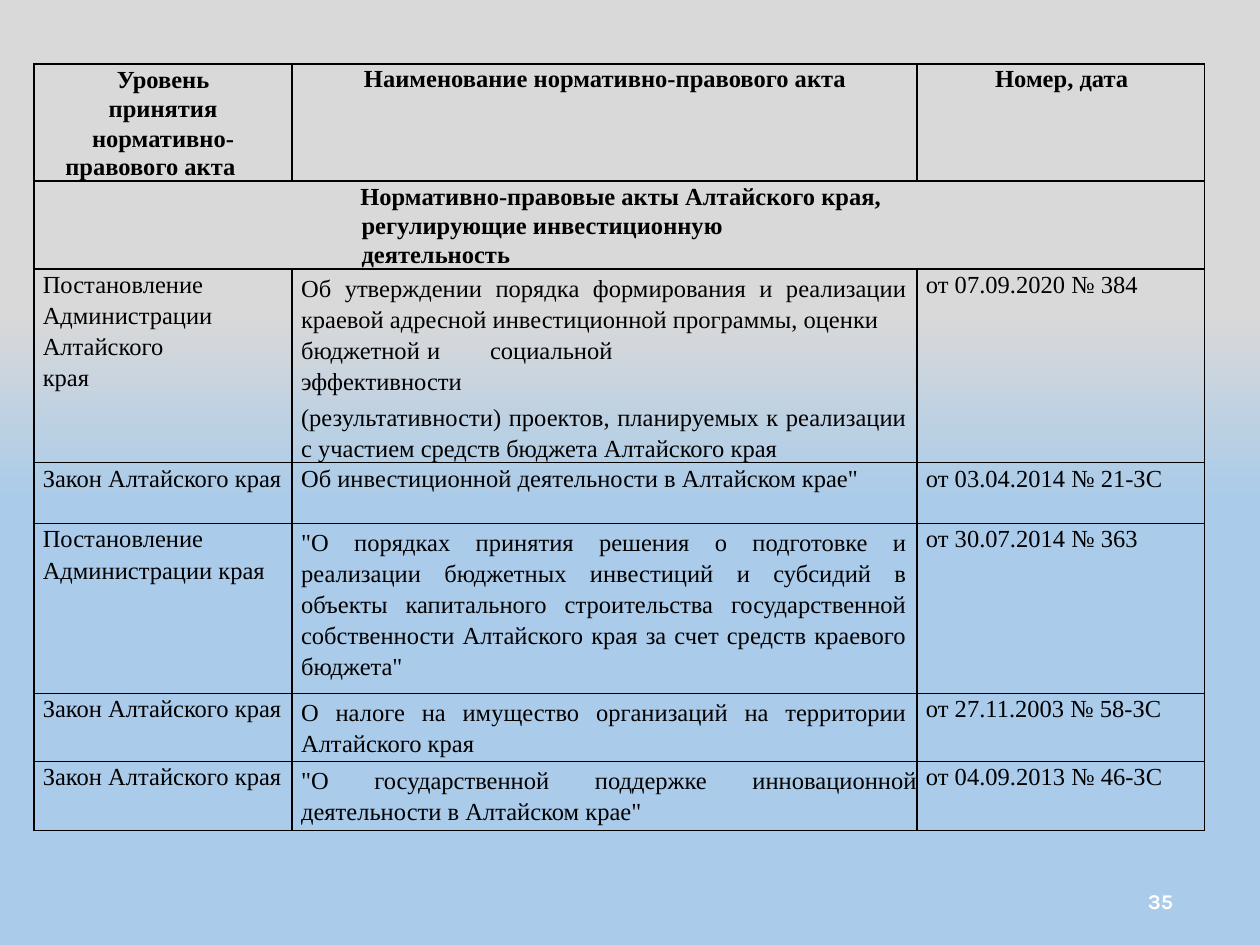
"""Build a slide with a table of regional investment legislation."""
from lxml import etree
from pptx import Presentation
from pptx import util as u
from pptx.dml.color import RGBColor
from pptx.enum import text
from pptx.oxml import ns

BLACK = RGBColor(0, 0, 0)
WHITE = RGBColor(255, 255, 255)
GREY = RGBColor(0xD9, 0xD9, 0xD9)
BLUE = RGBColor(0xAA, 0xCB, 0xE9)
BODY_FONT, NUMBER_FONT = "Times New Roman", "Karla"
LEFT, CENTER = text.PP_ALIGN.LEFT, text.PP_ALIGN.CENTER
RIGHT, JUSTIFY = text.PP_ALIGN.RIGHT, text.PP_ALIGN.JUSTIFY

COLUMNS = [147.6, 357.1, 164.2]
HEIGHTS = [51.1, 35.3, 97.2, 34.6, 97.2, 38.9, 39.6]
INDENT = 5.04
ACT_LAW = [("Закон Алтайского края", {})]
BLOCK = dict(align=JUSTIFY, right=6, line=1.15)

HEADER = [
    [("Уровень\nпринятия\nнормативно-",
      dict(align=CENTER, left=14.4, right=14.4, line=u.Pt(16.8))),
     ("правового акта", dict(align=CENTER, left=0, right=14.4, line=u.Pt(16.2)))],
    [("Наименование нормативно-правового акта", dict(left=41, line=u.Pt(16.4)))],
    [("Номер, дата", dict(left=44.6, line=u.Pt(16.4)))],
]
SECTION = [[("Нормативно-правовые акты Алтайского края,\n"
             "регулирующие инвестиционную\nдеятельность",
             dict(left=187.2, first=-0.7, line=u.Pt(16.8)))]]
ACTS = [
    [[("Постановление", {}),
      ("Администрации\nАлтайского\nкрая", dict(line=1.15))],
     [("Об утверждении порядка формирования и реализации\n"
       "краевой адресной инвестиционной программы, оценки", BLOCK),
      ("бюджетной\tи\tсоциальной\nэффективности",
       dict(line=1.15, tabs=[109.4, 153.4])),
      ("(результативности) проектов, планируемых к реализации\n"
       "с участием средств бюджета Алтайского края", dict(BLOCK, before=2.5))],
     [("от 07.09.2020 № 384", {})]],
    [ACT_LAW,
     [("Об инвестиционной деятельности в Алтайском крае\"", {})],
     [("от 03.04.2014 № 21-ЗС", {})]],
    [[("Постановление", {}), ("Администрации края", dict(before=2.5))],
     [("\"О порядках принятия решения о подготовке и\n"
       "реализации бюджетных инвестиций и субсидий в\n"
       "объекты капитального строительства государственной\n"
       "собственности Алтайского края за счет средств краевого\n"
       "бюджета\"", BLOCK)],
     [("от 30.07.2014 № 363", {})]],
    [ACT_LAW,
     [("О налоге на имущество организаций на территории\nАлтайского края", BLOCK)],
     [("от 27.11.2003 № 58-ЗС", {})]],
    [ACT_LAW,
     [("\"О государственной поддержке инновационной\n"
       "деятельности в Алтайском крае\"", dict(BLOCK, right=0))],
     [("от 04.09.2013 № 46-ЗС", {})]],
]


def add_child(parent, tag, **attributes):
    return etree.SubElement(parent, ns.qn(tag), attributes)


def format_para(para, words, bold, align=LEFT, left=INDENT, right=0, first=0,
                line=None, before=0, tabs=()):
    para.text = words
    props = para._p.get_or_add_pPr()
    for name, value in (("marL", left), ("marR", right), ("indent", first)):
        props.set(name, str(int(u.Pt(value))))
    if tabs:
        stops = add_child(props, "a:tabLst")
        for stop in tabs:
            add_child(stops, "a:tab", pos=str(int(u.Pt(stop))), algn="l")
    para.alignment = align
    para.space_before = u.Pt(before)
    if line:
        para.line_spacing = line
    set_font(para.font, BODY_FONT, 14, BLACK, bold)


def set_font(font, name, size, color, bold):
    font.name, font.size, font.bold = name, u.Pt(size), bold
    font.color.rgb = color


def draw_borders(cell):
    props = cell._tc.get_or_add_tcPr()
    for side in ("a:lnL", "a:lnR", "a:lnT", "a:lnB"):
        border = add_child(props, side, w=str(int(u.Pt(1))))
        add_child(add_child(border, "a:solidFill"), "a:srgbClr", val=str(BLACK))


def fill_cell(cell, paras, bold, top):
    cell.margin_left = cell.margin_right = cell.margin_bottom = 0
    cell.margin_top = u.Pt(top)
    frame = cell.text_frame
    for index, (words, options) in enumerate(paras):
        para = frame.add_paragraph() if index else frame.paragraphs[0]
        format_para(para, words, bold, **options)


def add_acts_table(slide):
    rows = [HEADER, SECTION] + ACTS
    table = slide.shapes.add_table(
        len(rows), len(COLUMNS), u.Pt(19.4), u.Pt(36.7),
        u.Pt(sum(COLUMNS)), u.Pt(sum(HEIGHTS))).table
    table.first_row = table.horz_banding = False
    for column, width in zip(table.columns, COLUMNS):
        column.width = u.Pt(width)
    for row, height in zip(table.rows, HEIGHTS):
        row.height = u.Pt(height)
    for cell in table.iter_cells():
        draw_borders(cell)
        cell.fill.background()
    table.cell(1, 0).merge(table.cell(1, len(COLUMNS) - 1))
    for r, row in enumerate(rows):
        for c, paras in enumerate(row):
            heading = r < 2
            fill_cell(table.cell(r, c), paras, heading, 0 if heading else 1.44)


def add_page_number(slide):
    box = slide.shapes.add_textbox(u.Pt(508.3), u.Pt(500.4), u.Pt(162), u.Pt(28.8))
    frame = box.text_frame
    frame.word_wrap = True
    frame.vertical_anchor = text.MSO_ANCHOR.MIDDLE
    frame.margin_left = frame.margin_right = frame.margin_top = frame.margin_bottom = 0
    para = frame.paragraphs[0]
    para.text = "35"
    para.alignment = RIGHT
    set_font(para.font, NUMBER_FONT, 12, WHITE, True)


def paint_background(slide):
    fill = slide.background.fill
    fill.gradient()
    fill.gradient_angle = 270
    for stop, position, color in zip(fill.gradient_stops, (0.33, 0.53), (GREY, BLUE)):
        stop.position = position
        stop.color.rgb = color


def main():
    deck = Presentation()
    deck.slide_width, deck.slide_height = u.Pt(720), u.Pt(540)
    page = deck.slides.add_slide(deck.slide_layouts[6])
    paint_background(page)
    add_acts_table(page)
    add_page_number(page)
    deck.save("out.pptx")


if __name__ == "__main__":
    main()
